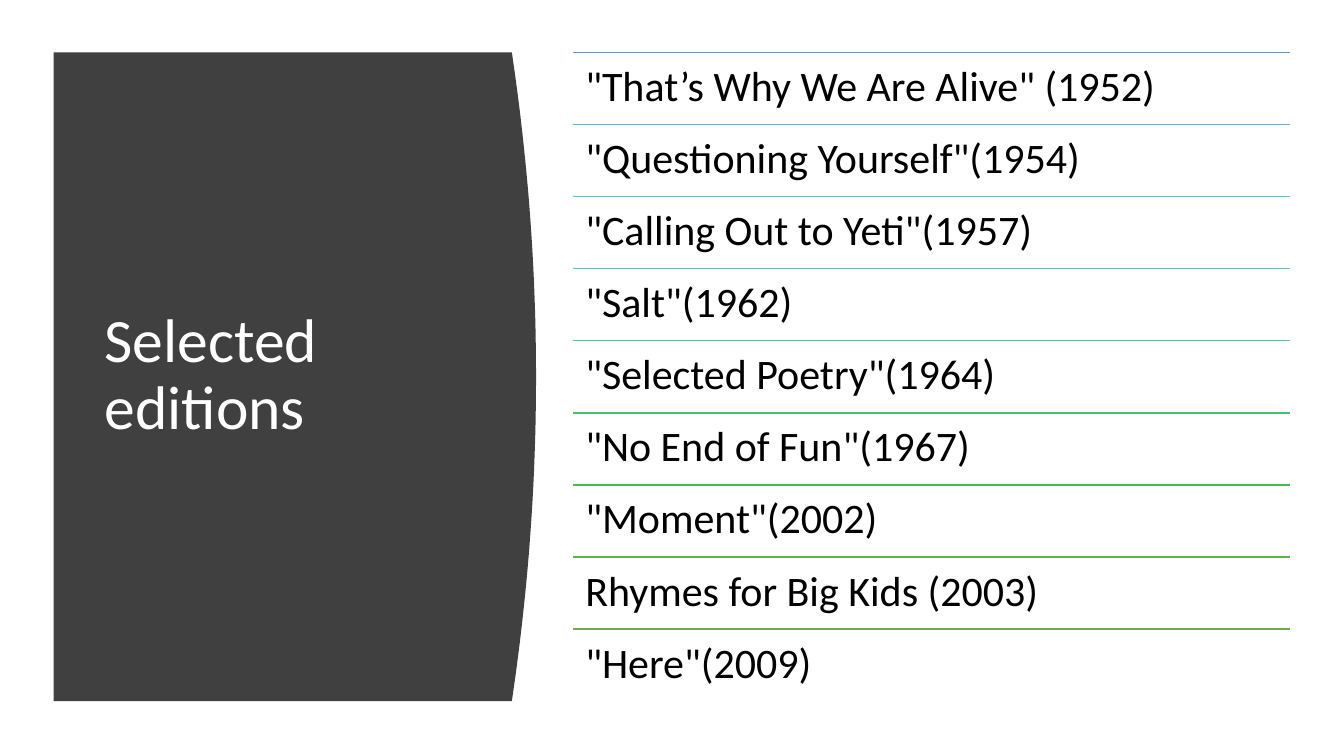
"""Builds the "Selected editions" slide: a curved title panel beside a ruled list of books."""
from lxml import etree
from pptx import Presentation
from pptx import util as u
from pptx.dml.color import RGBColor
from pptx.enum import shapes, text
from pptx.oxml.ns import qn

HEADING = "Selected editions"
EDITIONS = [
    ('"That’s Why We Are Alive" (1952)', "5B9BD5"),
    ('"Questioning Yourself"(1954)', "57B4D1"),
    ('"Calling Out to Yeti"(1957)', "54CCCD"),
    ('"Salt"(1962)', "51C9AD"),
    ('"Selected Poetry"(1964)', "4DC58D"),
    ('"No End of Fun"(1967)', "4AC06E"),
    ('"Moment"(2002)', "48BB4F"),
    ("Rhymes for Big Kids (2003)", "59B546"),
    ('"Here"(2009)', "70AD47"),
]

TOP, HEIGHT = 1.32, 16.35
PANEL_LEFT, PANEL_CORNER, PANEL_BULGE = 1.35, 12.9, 0.61
CURVE_STEPS = 48
LIST_LEFT, LIST_WIDTH = 14.43, 18.08


def paint(color_format, hex_color):
    color_format.rgb = RGBColor.from_string(hex_color)


def add_text(slide, wording, left, top, width, height, *, size, color,
             anchor=text.MSO_ANCHOR.TOP, inset=(0.25, 0.13)):
    box = slide.shapes.add_textbox(u.Cm(left), u.Cm(top), u.Cm(width), u.Cm(height))
    frame = box.text_frame
    frame.word_wrap = True
    frame.vertical_anchor = anchor
    frame.margin_left = frame.margin_right = u.Cm(inset[0])
    frame.margin_top = frame.margin_bottom = u.Cm(inset[1])
    paragraph = frame.paragraphs[0]
    paragraph.line_spacing = 0.9
    run = paragraph.add_run()
    run.text = wording
    run.font.name = "Calibri"
    run.font.size = u.Pt(size)
    paint(run.font.color, color)


def add_panel(slide):
    curve = []
    for step in range(CURVE_STEPS + 1):
        share = step / CURVE_STEPS
        bulge = PANEL_BULGE * (1 - (2 * share - 1) ** 2)
        curve.append((u.Cm(PANEL_CORNER + bulge), u.Cm(TOP + HEIGHT * share)))
    outline = slide.shapes.build_freeform(u.Cm(PANEL_LEFT), u.Cm(TOP))
    outline.add_line_segments(curve + [(u.Cm(PANEL_LEFT), u.Cm(TOP + HEIGHT))])
    panel = outline.convert_to_shape()
    panel.shadow.inherit = False
    panel.fill.solid()
    paint(panel.fill.fore_color, "404040")
    panel.line.fill.background()


def add_rule(slide, top, color):
    rule = slide.shapes.add_connector(
        shapes.MSO_CONNECTOR.STRAIGHT,
        u.Cm(LIST_LEFT), u.Cm(top), u.Cm(LIST_LEFT + LIST_WIDTH), u.Cm(top))
    rule.line.width = u.Pt(1)
    paint(rule.line.color, color)
    etree.SubElement(rule.element.spPr, qn("a:effectLst"))


def main():
    deck = Presentation()
    deck.slide_width, deck.slide_height = u.Cm(33.87), u.Cm(19.05)
    slide = deck.slides.add_slide(deck.slide_layouts[6])
    add_panel(slide)
    add_text(slide, HEADING, 2.39, 2.82, 9.5, 13.31, size=44, color="FFFFFF",
             anchor=text.MSO_ANCHOR.MIDDLE)
    row_height = HEIGHT / len(EDITIONS)
    for row, (edition, color) in enumerate(EDITIONS):
        top = TOP + row * row_height
        add_rule(slide, top, color)
        add_text(slide, edition, LIST_LEFT, top, LIST_WIDTH, row_height,
                 size=30, color="000000", inset=(0.32, 0.32))
    deck.save("out.pptx")


if __name__ == "__main__":
    main()
